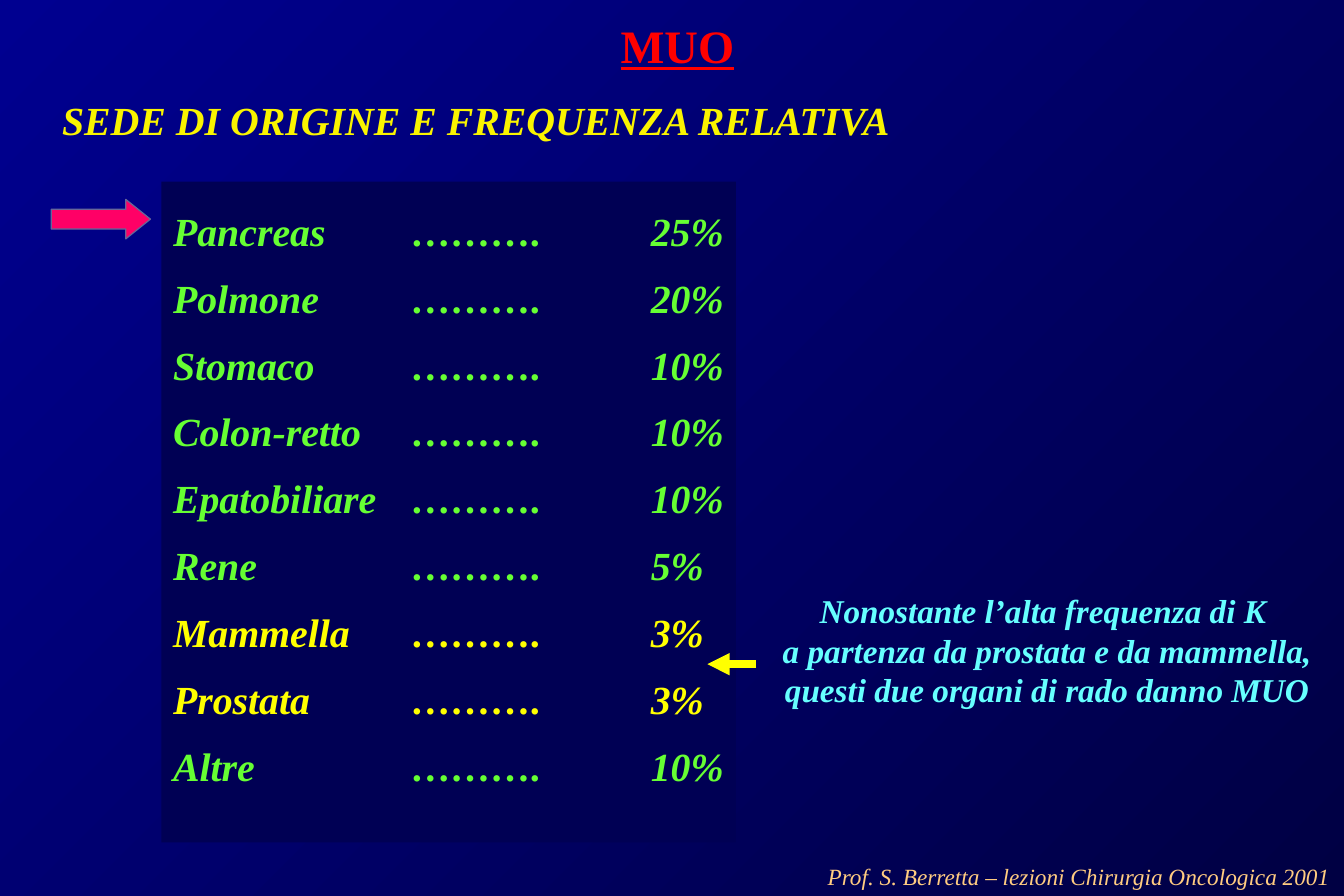
"""Build the MUO slide on sites of origin and their relative frequency."""
from dataclasses import dataclass

from lxml import etree
from pptx import Presentation
from pptx.dml.color import RGBColor
from pptx.enum import shapes, text
from pptx.oxml import ns
from pptx.util import Cm, Pt


@dataclass(frozen=True)
class Theme:
    font: str = "Times New Roman"
    start: str = "000090"
    end: str = "000043"
    panel: str = "000054"
    red: str = "FF0000"
    pink: str = "FF0066"
    edge: str = "666699"
    gold: str = "FAF400"
    yellow: str = "FFFF00"
    green: str = "66FF33"
    cyan: str = "66FFFF"
    sand: str = "FFCC81"
    title: int = 28
    body: int = 24
    note: int = 20
    foot: int = 14


@dataclass(frozen=True)
class Box:
    left: float
    top: float
    width: float
    height: float

    def place(self) -> tuple:
        return Cm(self.left), Cm(self.top), Cm(self.width), Cm(self.height)


@dataclass(frozen=True)
class Label:
    box: Box
    lines: tuple
    size: int
    color: str
    bold: bool = True
    italic: bool = True
    under: bool = False
    center: bool = False
    middle: bool = False


@dataclass(frozen=True)
class Site:
    name: str
    share: int
    color: str


T = Theme()
LABELS = (
    Label(Box(3.61, 0, 21.59, 1.91), ("MUO",), T.title, T.red,
          italic=False, under=True, center=True, middle=True),
    Label(Box(1.07, 1.91, 18.29, 1.27),
          ("SEDE DI ORIGINE E FREQUENZA RELATIVA",), T.body, T.gold),
    Label(Box(16.15, 12.42, 12.24, 2.79),
          ("Nonostante l’alta frequenza di K ",
           "a partenza da prostata e da mammella,",
           "questi due organi di rado danno MUO"),
          T.note, T.cyan, center=True),
    Label(Box(17.35, 18.21, 11.23, 0.84),
          ("Prof. S. Berretta – lezioni Chirurgia Oncologica 2001",),
          T.foot, T.sand, bold=False),
)
SITES = (
    Site("Pancreas", 25, T.green),
    Site("Polmone", 20, T.green),
    Site("Stomaco", 10, T.green),
    Site("Colon-retto", 10, T.green),
    Site("Epatobiliare", 10, T.green),
    Site("Rene", 5, T.green),
    Site("Mammella", 3, T.yellow),
    Site("Prostata", 3, T.yellow),
    Site("Altre", 10, T.green),
)
PANEL = Box(3.43, 3.86, 12.22, 14.05)
ARROW = Box(1.09, 4.24, 2.11, 0.84)
TABS = (5.08, 10.16)


def rgb(color: str) -> RGBColor:
    return RGBColor.from_string(color)


def style(para, size: int, color: str, bold: bool = True,
          italic: bool = True) -> None:
    font = para.font
    font.name, font.size = T.font, Pt(size)
    font.bold, font.italic = bold, italic
    font.color.rgb = rgb(color)


def write(frame, lines: tuple) -> list:
    frame.word_wrap = False
    frame.text = "\n".join(lines)
    return list(frame.paragraphs)


def paint(slide) -> None:
    fill = slide.background.fill
    fill.gradient()
    fill.gradient_angle = 315
    for stop, color in zip(fill.gradient_stops, (T.start, T.end)):
        stop.color.rgb = rgb(color)


def add_label(slide, label: Label) -> None:
    frame = slide.shapes.add_textbox(*label.box.place()).text_frame
    paras = write(frame, label.lines)
    if label.middle:
        frame.vertical_anchor = text.MSO_ANCHOR.MIDDLE
    for para in paras:
        style(para, label.size, label.color, label.bold, label.italic)
        if label.under:
            para.font.underline = True
        if label.center:
            para.alignment = text.PP_ALIGN.CENTER


def add_solid(slide, kind, box: Box, color: str):
    shape = slide.shapes.add_shape(kind, *box.place())
    shape.shadow.inherit = False
    shape.fill.solid()
    shape.fill.fore_color.rgb = rgb(color)
    return shape


def add_tabs(para) -> None:
    tabs = etree.SubElement(para._p.get_or_add_pPr(), ns.qn("a:tabLst"))
    for stop in TABS:
        etree.SubElement(tabs, ns.qn("a:tab"), pos=str(Cm(stop)), algn="l")


def add_panel(slide) -> None:
    shape = add_solid(slide, shapes.MSO_SHAPE.RECTANGLE, PANEL, T.panel)
    shape.line.fill.background()
    frame = shape.text_frame
    frame.vertical_anchor = text.MSO_ANCHOR.TOP
    lines = tuple(f"{site.name}\t……….\t{site.share}%" for site in SITES)
    for para, site in zip(write(frame, lines), SITES):
        para.alignment = text.PP_ALIGN.LEFT
        para.line_spacing = 1.4
        add_tabs(para)
        style(para, T.body, site.color)


def add_arrow(slide) -> None:
    shape = add_solid(slide, shapes.MSO_SHAPE.RIGHT_ARROW, ARROW, T.pink)
    shape.adjustments[0] = 0.5
    shape.adjustments[1] = 0.625
    shape.line.color.rgb = rgb(T.edge)
    shape.line.width = Pt(0.75)


def add_link(slide) -> None:
    link = slide.shapes.add_connector(
        shapes.MSO_CONNECTOR.STRAIGHT,
        Cm(16.08), Cm(14.12), Cm(15.04), Cm(14.12))
    link.line.color.rgb = rgb(T.yellow)
    link.line.width = Pt(4.5)
    etree.SubElement(link.line._get_or_add_ln(), ns.qn("a:tailEnd"),
                     type="triangle")
    etree.SubElement(link._element.spPr, ns.qn("a:effectLst"))


def main() -> None:
    deck = Presentation()
    deck.slide_width, deck.slide_height = Cm(28.58), Cm(19.05)
    slide = deck.slides.add_slide(deck.slide_layouts[6])
    paint(slide)
    add_panel(slide)
    add_arrow(slide)
    for label in LABELS:
        add_label(slide, label)
    add_link(slide)
    deck.save("out.pptx")


if __name__ == "__main__":
    main()
